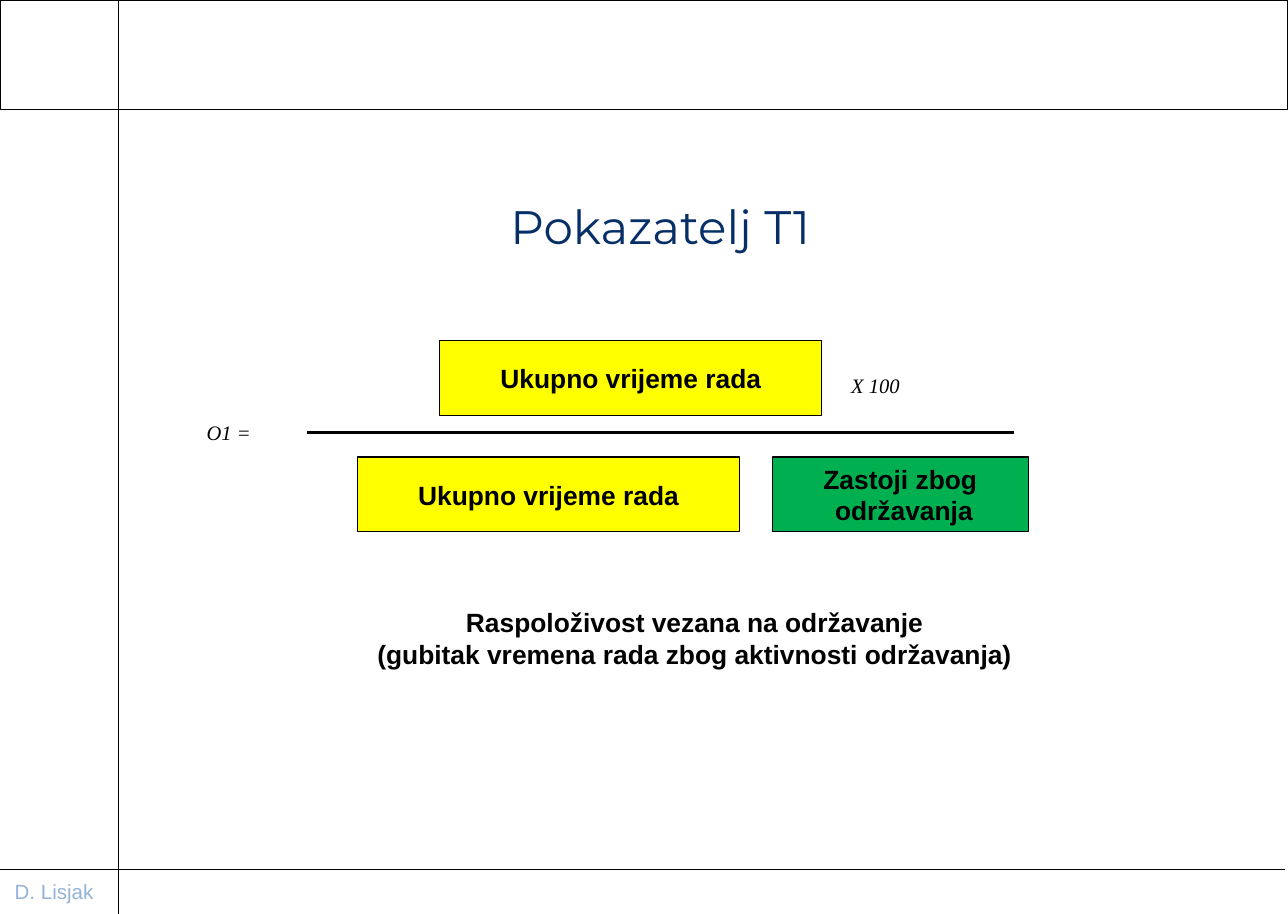
from dataclasses import dataclass

from lxml import etree
from pptx import Presentation
from pptx import util as u
from pptx.dml.color import RGBColor
from pptx.enum import shapes, text
from pptx.oxml.ns import qn
from pptx.slide import Slide
from pptx.text.text import TextFrame

COLOURS = {
    "black": "000000",
    "fraction": "020202",
    "title": "072F67",
    "author": "95B3D7",
    "work": "FFFF00",
    "downtime": "00B050",
}
WIDTH, HEIGHT = 12.21, 8.66
LEFT, CENTER = text.PP_ALIGN.LEFT, text.PP_ALIGN.CENTER


@dataclass
class Style:
    font: str
    size: float
    colour: str = "black"
    bold: bool = False
    italic: bool = False
    align: text.PP_ALIGN = LEFT


@dataclass
class Box:
    left: float
    top: float
    width: float
    height: float
    fill: str | None = None
    words: str = ""


@dataclass
class Label:
    left: float
    top: float
    width: float
    height: float
    words: str
    style: Style
    wrap: bool = True


@dataclass
class Rule:
    x1: float
    y1: float
    x2: float
    y2: float
    colour: str = "black"
    weight: float = 0.75


STRONG = Style("Arial", 18, bold=True, align=CENTER)
FORMULA = Style("Times New Roman", 14, italic=True)
AUTHOR = Style("Arial", 14, "author")
TITLE = Style("Montserrat", 32, "title", align=CENTER)

WORK_TIME = "Ukupno vrijeme rada"
BOXES = [
    Box(0, 0, WIDTH, 1.04),
    Box(4.17, 3.23, 3.62, 0.71, "work", WORK_TIME),
    Box(7.32, 4.33, 2.43, 0.71, "downtime", "Zastoji zbog\n održavanja"),
    Box(3.39, 4.33, 3.62, 0.71, "work", WORK_TIME),
]
RULES = [
    Rule(0, 8.24, 12.18, 8.24),
    Rule(1.12, 0, 1.12, HEIGHT),
    Rule(2.91, 4.1, 9.61, 4.1, "fraction", 2),
]
LABELS = [
    Label(0.04, 8.27, 0.95, 0.34, "D. Lisjak", AUTHOR, wrap=False),
    Label(7.97, 3.41, 1.79, 0.49, "X 100", FORMULA),
    Label(1.86, 3.88, 0.75, 0.44, "O1 =", FORMULA),
    Label(3.45, 5.69, 6.27, 0.71,
          "Raspoloživost vezana na održavanje\n"
          "(gubitak vremena rada zbog aktivnosti održavanja)",
          STRONG, wrap=False),
]


def rgb(name: str) -> RGBColor:
    return RGBColor.from_string(COLOURS[name])


def write(frame: TextFrame, words: str, style: Style, wrap: bool = True) -> None:
    frame.text = words
    frame.word_wrap = wrap
    frame.auto_size = text.MSO_AUTO_SIZE.NONE
    frame.vertical_anchor = text.MSO_ANCHOR.MIDDLE
    for paragraph in frame.paragraphs:
        paragraph.alignment = style.align
        for run in paragraph.runs:
            run.font.name = style.font
            run.font.size = u.Pt(style.size)
            run.font.bold = style.bold
            run.font.italic = style.italic
            run.font.color.rgb = rgb(style.colour)


def draw_box(slide: Slide, box: Box) -> None:
    rectangle = slide.shapes.add_shape(
        shapes.MSO_SHAPE.RECTANGLE, u.Inches(box.left), u.Inches(box.top),
        u.Inches(box.width), u.Inches(box.height))
    rectangle.shadow.inherit = False
    rectangle.line.color.rgb = rgb("black")
    rectangle.line.width = u.Pt(0.75)
    if box.fill:
        rectangle.fill.solid()
        rectangle.fill.fore_color.rgb = rgb(box.fill)
    else:
        rectangle.fill.background()
    if box.words:
        write(rectangle.text_frame, box.words, STRONG, wrap=False)


def draw_label(slide: Slide, label: Label) -> None:
    area = slide.shapes.add_textbox(
        u.Inches(label.left), u.Inches(label.top),
        u.Inches(label.width), u.Inches(label.height))
    write(area.text_frame, label.words, label.style, label.wrap)


def draw_rule(slide: Slide, rule: Rule) -> None:
    line = slide.shapes.add_connector(
        shapes.MSO_CONNECTOR.STRAIGHT, u.Inches(rule.x1), u.Inches(rule.y1),
        u.Inches(rule.x2), u.Inches(rule.y2))
    line.line.color.rgb = rgb(rule.colour)
    line.line.width = u.Pt(rule.weight)
    etree.SubElement(line._element.spPr, qn("a:effectLst"))


def draw_title(slide: Slide) -> None:
    title = slide.shapes.title
    title.left, title.top = u.Inches(3.15), u.Inches(2.01)
    title.width, title.height = u.Inches(6.22), u.Inches(0.55)
    write(title.text_frame, "Pokazatelj T1", TITLE)
    title.text_frame.vertical_anchor = text.MSO_ANCHOR.TOP
    title.text_frame.paragraphs[0].line_spacing = u.Pt(24.9)


def main() -> None:
    deck = Presentation()
    deck.slide_width, deck.slide_height = u.Inches(WIDTH), u.Inches(HEIGHT)
    slide = deck.slides.add_slide(deck.slide_layouts[5])
    draw_title(slide)
    for box in BOXES:
        draw_box(slide, box)
    for rule in RULES:
        draw_rule(slide, rule)
    for label in LABELS:
        draw_label(slide, label)
    deck.save("out.pptx")


if __name__ == "__main__":
    main()
